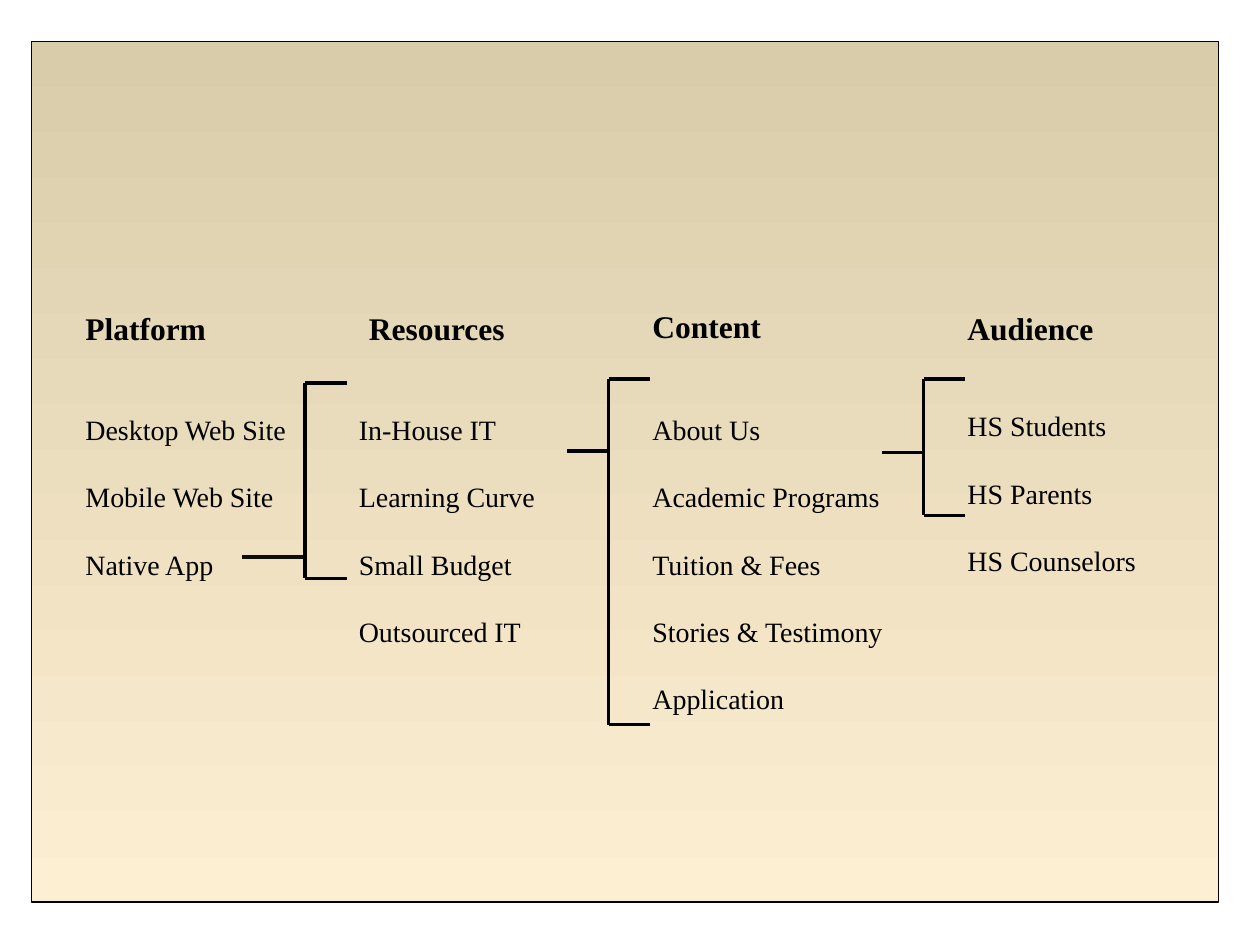
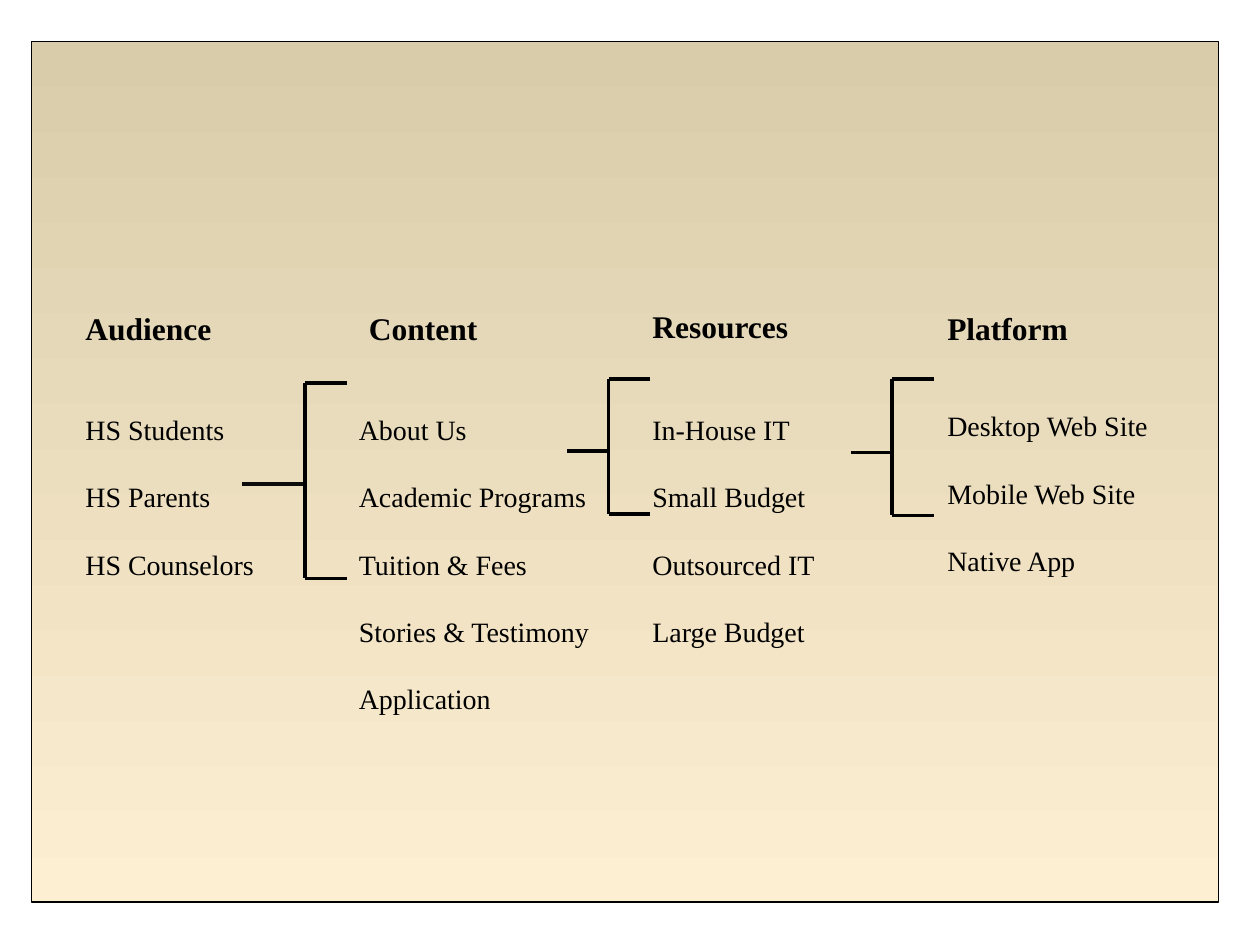
from dataclasses import dataclass

from lxml import etree
from pptx import Presentation
from pptx import util as u
from pptx.dml.color import RGBColor
from pptx.enum import shapes, text
from pptx.oxml import ns

BLACK = RGBColor(0x00, 0x00, 0x00)
NEAR_BLACK = RGBColor(0x0D, 0x0D, 0x0D)
TAN = RGBColor(0xD8, 0xCC, 0xAB)
CREAM = RGBColor(0xFD, 0xEF, 0xD1)

FONT = "Times New Roman"
HEADING_SIZE, ITEM_SIZE = 18, 16
HEADING_HEIGHT = 0.62
LINE_HEIGHT = 0.53  # one double-spaced item
ARM = 0.33  # bracket arms, and the stem unless told otherwise

AUDIENCE = ("Audience", ["HS Students", "HS Parents", "HS Counselors"])
CONTENT = ("Content", ["About Us", "Academic Programs", "Tuition & Fees",
                       "Stories & Testimony", "Application"])
PLATFORM = ("Platform", ["Desktop Web Site", "Mobile Web Site", "Native App"])
RESOURCES = ("Resources", ["In-House IT", "Learning Curve", "Small Budget",
                           "Outsourced IT"])
RESOURCES_LATER = ("Resources", ["In-House IT", "Small Budget",
                                 "Outsourced IT", "Large Budget"])


@dataclass
class Column:
    left: float
    width: float
    heading_top: float = 2.1
    items_top: float = 2.96
    heading_indent: float = 0


@dataclass
class Bracket:
    left: float  # position of the upright
    top: float
    height: float
    stem_drop: float  # from the top of the upright to the stem
    stem: float = ARM
    stem_color: RGBColor = BLACK


FIRST = Column(0.58, 2.58)
SECOND = Column(2.75, 2.17, heading_indent=0.08)
THIRD = Column(5.08, 2.17, heading_top=2.09)


def last_column(left):
    return Column(left, 1.92, items_top=2.93)


def first_bracket(stem_drop):
    return Bracket(2.42, 3.04, 1.55, stem_drop, 0.5, NEAR_BLACK)


def middle_bracket(height):
    return Bracket(4.83, 3.01, height, 0.57)


def last_bracket(left):
    return Bracket(left, 3.01, 1.08, 0.58)


def add_panel(page):
    """Framed gradient panel behind everything."""
    panel = page.shapes.add_shape(shapes.MSO_SHAPE.RECTANGLE, u.Inches(0.25),
                                  u.Inches(0.33), u.Inches(9.42), u.Inches(6.83))
    panel.shadow.inherit = False
    panel.fill.gradient()
    panel.fill.gradient_angle = 270
    for stop, color in zip(panel.fill.gradient_stops, (TAN, CREAM)):
        stop.color.rgb = color
    panel.line.color.rgb = BLACK
    panel.line.width = u.Pt(1)


def add_text(page, left, top, width, height, lines, size, bold=False):
    box = page.shapes.add_textbox(u.Inches(left), u.Inches(top),
                                  u.Inches(width), u.Inches(height))
    frame = box.text_frame
    frame.word_wrap = True
    frame.auto_size = text.MSO_AUTO_SIZE.SHAPE_TO_FIT_TEXT
    for index, line in enumerate(lines):
        para = frame.add_paragraph() if index else frame.paragraphs[0]
        para.line_spacing = 2.0
        span = para.add_run()
        span.text = line
        span.font.name = FONT
        span.font.size = u.Pt(size)
        span.font.bold = bold
        span.font.color.rgb = BLACK


def add_column(page, column, topic):
    """Bold heading with its list below."""
    heading, items = topic
    add_text(page, column.left + column.heading_indent, column.heading_top,
             1.6, HEADING_HEIGHT, [heading], HEADING_SIZE, bold=True)
    add_text(page, column.left, column.items_top, column.width,
             0.1 + LINE_HEIGHT * len(items), items, ITEM_SIZE)


def add_line(page, x1, y1, x2, y2, color=BLACK):
    line = page.shapes.add_connector(shapes.MSO_CONNECTOR.STRAIGHT, u.Inches(x1),
                                     u.Inches(y1), u.Inches(x2), u.Inches(y2))
    line.line.color.rgb = color
    line.line.width = u.Pt(2)
    properties = line._element.find(ns.qn("p:spPr"))
    etree.SubElement(properties, ns.qn("a:effectLst"))


def add_bracket(page, bracket):
    """Stem on the left, upright, and two arms on the right."""
    left, top = bracket.left, bracket.top
    bottom, stem_y = top + bracket.height, top + bracket.stem_drop
    add_line(page, left - bracket.stem, stem_y, left, stem_y, bracket.stem_color)
    add_line(page, left, top, left, bottom)
    for y in (bottom, top):
        add_line(page, left, y, left + ARM, y)


def add_flow_slide(deck, columns, topics, brackets):
    page = deck.slides.add_slide(deck.slide_layouts[6])
    add_panel(page)
    for column, topic in zip(columns, topics):
        add_column(page, column, topic)
    for bracket in brackets:
        add_bracket(page, bracket)


def main():
    deck = Presentation()
    deck.slide_width, deck.slide_height = u.Inches(10), u.Inches(7.5)

    # From platform to audience
    add_flow_slide(deck, [FIRST, SECOND, THIRD, last_column(7.58)],
                   [PLATFORM, RESOURCES, CONTENT, AUDIENCE],
                   [first_bracket(1.38), middle_bracket(2.74), last_bracket(7.33)])

    # From audience to platform
    add_flow_slide(deck, [FIRST, SECOND, THIRD, last_column(7.42)],
                   [AUDIENCE, CONTENT, RESOURCES_LATER, PLATFORM],
                   [first_bracket(0.8), middle_bracket(1.07), last_bracket(7.08)])

    deck.save("out.pptx")


if __name__ == "__main__":
    main()
